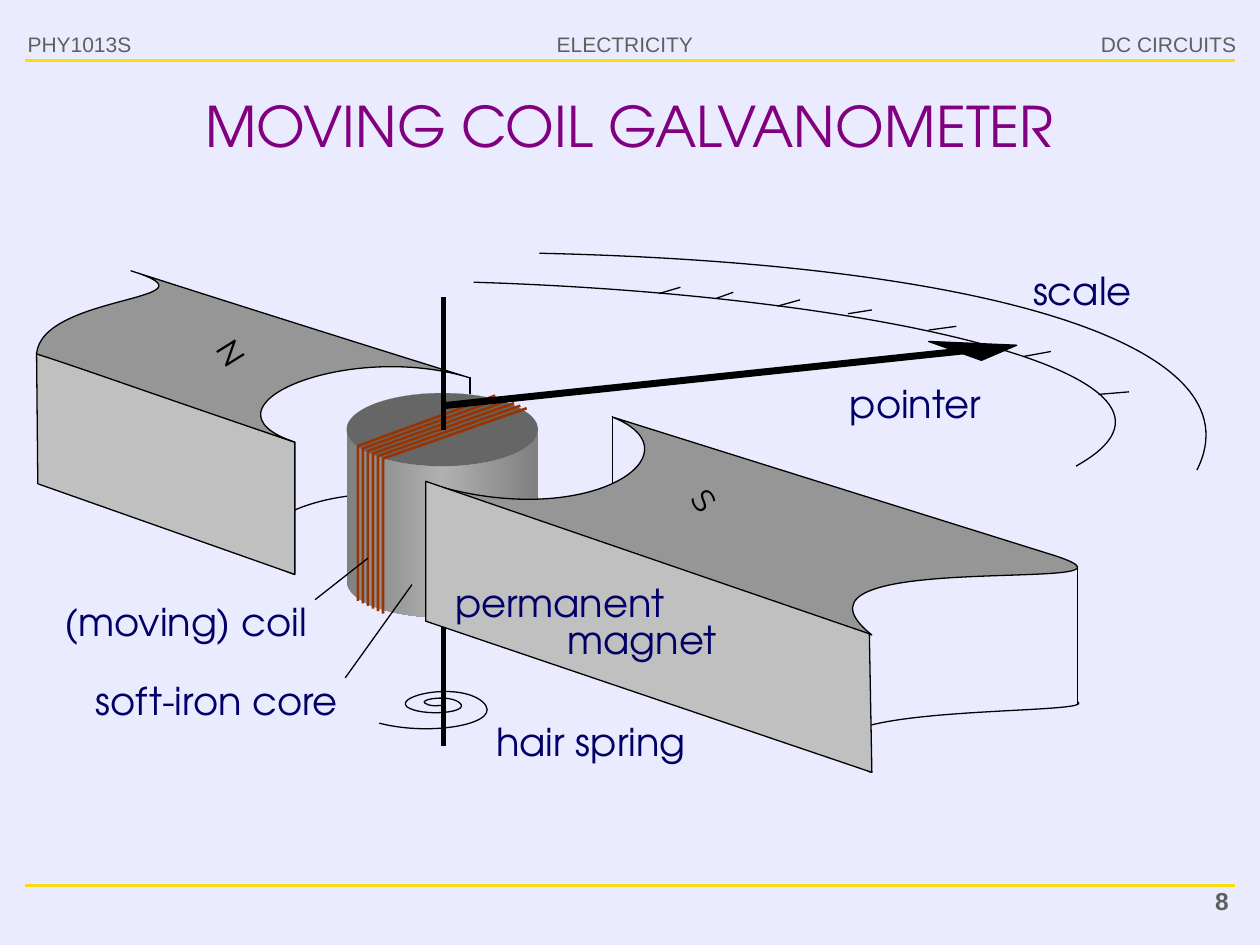
from copy import deepcopy

from pptx import Presentation
from pptx.dml.color import RGBColor
from pptx.enum.shapes import MSO_CONNECTOR, MSO_SHAPE
from pptx.enum.text import MSO_ANCHOR, PP_ALIGN
from pptx.oxml import parse_xml
from pptx.oxml.ns import nsdecls, qn
from pptx.oxml.xmlchemy import OxmlElement
from pptx.util import Cm, Pt

LAVENDER = RGBColor(0xEB, 0xEB, 0xFF)
YELLOW = RGBColor(0xF8, 0xDC, 0x0E)
HEADER_GREY = RGBColor(0x5F, 0x5F, 0x5F)
PURPLE = RGBColor(0x80, 0x00, 0x80)
NAVY = RGBColor(0x00, 0x00, 0x66)
BLACK = RGBColor(0x00, 0x00, 0x00)
COPPER = RGBColor(0x99, 0x33, 0x00)
POLE_TOP = RGBColor(0x96, 0x96, 0x96)
POLE_SIDE = RGBColor(0xC0, 0xC0, 0xC0)
CORE_TOP = RGBColor(0x66, 0x66, 0x66)
CORE_EDGE = RGBColor(0x80, 0x80, 0x80)
CORE_MIDDLE = RGBColor(0xB0, 0xB0, 0xB0)
LABEL_FONT = "TeX Gyre Adventor"

# Content: all places are in inches, as left, top, width, height
TITLE = "MOVING COIL GALVANOMETER"
HEADERS = [  # text, place, alignment, size, bold
    ("ELECTRICITY", (4.06, 0.2, 1.8, 0.3), PP_ALIGN.CENTER, 12, False),
    ("DC CIRCUITS", (8.1, 0.2, 1.81, 0.3), PP_ALIGN.RIGHT, 12, False),
    ("PHY1013S", (0.12, 0.2, 1.18, 0.32), PP_ALIGN.LEFT, 12, False),
    ("8", (8.82, 6.98, 1.03, 0.37), PP_ALIGN.RIGHT, 14, True),
]
LABELS = [  # text, left, top, width
    ("scale", 7.84, 2.08, 1.5),
    ("pointer", 6.52, 2.98, 1.49),
    ("permanent", 3.53, 4.56, 1.83),
    ("magnet", 4.18, 4.85, 1.83),
    ("hair spring", 3.65, 5.66, 2.08),
    ("soft-iron core", 0.6, 5.34, 2.24),
    ("(moving) coil", 0.4, 4.71, 2.15),
]
LEADERS = [(2.74, 5.38, 3.27, 4.64), (2.5, 4.76, 2.92, 4.43)]
SCALE_TICKS = [
    (5.23, 2.33, 5.4, 2.28), (5.68, 2.37, 5.82, 2.32), (6.17, 2.43, 6.35, 2.38),
    (6.73, 2.49, 6.92, 2.46), (7.37, 2.62, 7.59, 2.59), (8.12, 2.83, 8.34, 2.79),
    (8.72, 3.13, 8.96, 3.11),
]

# Outlines: start point, then segments (two numbers a line, six a curve)
NORTH_BASE = [(2.34, 4.56), (1.51, 4.28, 2.68, 3.66, 3.73, 4.04)]
NORTH_SIDE = [(0.29, 2.8), (0.3, 3.84), (2.34, 4.56), (2.34, 3.51), (0.29, 2.8)]
NORTH_TOP = [(3.73, 3), (2.38, 2.58, 1.04, 2.15, 1.04, 2.15),
             (1.81, 2.39, 0.33, 2.33, 0.29, 2.81), (0.58, 2.9, 1.16, 3.11, 2.34, 3.51),
             (1.51, 3.23, 2.76, 2.7, 3.73, 3)]
SOUTH_BASE = [(8.55, 5.57), (8.77, 5.69, 5.82, 5.56, 6.91, 6.13)]
SOUTH_TOP = [(4.86, 3.31), (6.61, 3.86, 8.37, 4.41, 8.37, 4.41),
             (9.35, 4.73, 6.03, 4.33, 6.92, 5.04), (6.92, 5.04, 5.15, 4.44, 3.38, 3.83),
             (4.66, 4.24, 5.59, 3.6, 4.86, 3.31)]
SOUTH_SIDE = [(3.38, 4.93), (3.38, 3.82), (6.9, 5.03), (6.92, 6.13), (3.38, 4.93)]
HAIR_SPRING = [(3.01, 5.74), (3.43, 5.85, 4.02, 5.74, 3.83, 5.57),
               (3.64, 5.41, 3.13, 5.52, 3.23, 5.61), (3.34, 5.69, 3.74, 5.66, 3.65, 5.58),
               (3.57, 5.51, 3.33, 5.55, 3.37, 5.58), (3.41, 5.61, 3.47, 5.6, 3.5, 5.6)]
POINTER_HEAD = [(7.37, 2.71), (8.07, 2.74), (7.79, 2.86), (7.37, 2.71)]
SCALE_ARCS = [[(3.76, 2.24), (6.97, 2.34, 9.82, 2.99, 8.54, 3.7)],
              [(4.28, 2.01), (7.85, 2.09, 10, 2.74, 9.5, 3.73)]]
# Windings run foot - rim - far rim; each one is shifted by a fixed step
FIRST_WINDING = [(2.84, 4.77), (2.84, 3.54), (3.93, 3.14)]
WINDING_STEPS = [(0.04, 0.02), (0.04, 0.02), (0.05, 0.02)]
WINDING_COUNT = 6


def inches(*lengths):
    return [Cm(length * 2.54) for length in lengths]


def add_line(parent, ends, width=0.75, color=BLACK):
    line = parent.add_connector(MSO_CONNECTOR.STRAIGHT, *inches(*ends))
    line.line.color.rgb = color
    line.line.width = Pt(width)
    line._element.spPr.append(OxmlElement("a:effectLst"))


def add_outline(parent, points, fill=None, width=0.75, color=BLACK):
    start, *segments = points
    builder = parent.build_freeform(*inches(*start), scale=1.0)
    vertices = [inches(*segment[i:i + 2])
                for segment in segments for i in range(0, len(segment), 2)]
    builder.add_line_segments(vertices, close=fill is not None)
    outline = builder.convert_to_shape()
    outline.shadow.inherit = False
    outline.line.color.rgb = color
    outline.line.width = Pt(width)
    if fill is None:
        outline.fill.background()
    else:
        outline.fill.solid()
        outline.fill.fore_color.rgb = fill
    # Join the three points of each curve into one Bézier segment
    drawing = outline._element.find(".//" + qn("a:path"))
    nodes = iter(drawing.findall(qn("a:lnTo")))
    for segment in segments:
        group = [next(nodes) for _ in range(len(segment) // 2)]
        if len(group) == 3:
            curve = OxmlElement("a:cubicBezTo")
            group[0].addprevious(curve)
            for node in group:
                curve.append(node[0])
                drawing.remove(node)


def add_text(parent, text, place, align, size, color, font="Arial", bold=False):
    box = parent.add_textbox(*inches(*place))
    box.text_frame.word_wrap = True
    paragraph = box.text_frame.paragraphs[0]
    paragraph.text = text
    paragraph.alignment = align
    run_font = paragraph.runs[0].font
    run_font.name, run_font.size, run_font.bold = font, Pt(size), bold
    run_font.color.rgb = color
    return box


def add_pole_letter(parent, letter, place, angle):
    box = add_text(parent, letter, place, PP_ALIGN.CENTER, 18, BLACK, "Montserrat")
    box.rotation = angle
    box.text_frame.word_wrap = False
    box.text_frame.paragraphs[0].runs[0].font._element.insert(0, parse_xml(
        f'<a:ln {nsdecls("a")} w="9525"><a:solidFill><a:srgbClr val="000000"/>'
        "</a:solidFill></a:ln>"))


def add_core(parent):
    body = parent.add_shape(MSO_SHAPE.CAN, *inches(2.75, 3.12, 1.52, 1.78))
    body.adjustments[0] = 0.38
    body.fill.gradient()
    body.fill.gradient_angle = 0
    stops = body.fill.gradient_stops
    for stop, position in zip(stops, (0, 1)):
        stop.color.rgb = CORE_EDGE
        stop.position = position
    first = body._element.find(".//" + qn("a:gs"))
    first.addnext(deepcopy(first))
    middle = body.fill.gradient_stops[1]
    middle.color.rgb = CORE_MIDDLE
    middle.position = 0.5
    top = parent.add_shape(MSO_SHAPE.OVAL, *inches(2.75, 3.12, 1.52, 0.58))
    top.fill.solid()
    top.fill.fore_color.rgb = CORE_TOP
    for part in (body, top):
        part.line.fill.background()
        part.shadow.inherit = False


prs = Presentation()
prs.slide_width, prs.slide_height = inches(10, 7.5)
slide = prs.slides.add_slide(prs.slide_layouts[5])
slide.background.fill.solid()
slide.background.fill.fore_color.rgb = LAVENDER
shapes = slide.shapes

# Header, footer and title
for rule_y in (0.48, 7.03):
    add_line(shapes, (0.2, rule_y, 9.8, rule_y), 1.75, YELLOW)
for text, place, align, size, bold in HEADERS:
    add_text(shapes, text, place, align, size, HEADER_GREY, bold=bold)
title = shapes.title
title.left, title.top, title.width, title.height = inches(0.5, 0.63, 9, 0.72)
title.text_frame.text = TITLE
title.text_frame.vertical_anchor = MSO_ANCHOR.MIDDLE
heading = title.text_frame.paragraphs[0]
heading.alignment = PP_ALIGN.CENTER
heading.runs[0].font.name = LABEL_FONT
heading.runs[0].font.size = Pt(32)
heading.runs[0].font.color.rgb = PURPLE

# North pole
add_outline(shapes, NORTH_BASE)
add_outline(shapes, NORTH_SIDE, POLE_SIDE)
add_line(shapes, (3.73, 4.05, 3.73, 2.99))
add_outline(shapes, NORTH_TOP, POLE_TOP)
add_pole_letter(shapes, "N", (1.68, 2.51, 0.19, 0.43), 58)

# Core, coil, shaft and hair spring
add_core(shapes)
for turn in range(WINDING_COUNT):
    winding = [(x + turn * dx, y + turn * dy)
               for (x, y), (dx, dy) in zip(FIRST_WINDING, WINDING_STEPS)]
    add_outline(shapes, winding, width=1.5, color=COPPER)
for shaft in ((3.52, 3.41, 3.52, 2.36), (3.52, 5.92, 3.52, 4.9)):
    add_line(shapes, shaft, 3)
add_outline(shapes, HAIR_SPRING)

# Pointer and scale
pointer = shapes.add_group_shape().shapes
add_line(pointer, (3.52, 3.22, 7.79, 2.77), 4)
add_outline(pointer, POINTER_HEAD, BLACK)
for arc in SCALE_ARCS:
    add_outline(shapes, arc)
for tick in SCALE_TICKS:
    add_line(shapes, tick)

# South pole
south = shapes.add_group_shape().shapes
add_outline(south, SOUTH_BASE)
add_outline(south, SOUTH_TOP, POLE_TOP)
add_line(south, (8.55, 5.59, 8.55, 4.49))
add_outline(south, SOUTH_SIDE, POLE_SIDE)
add_line(south, (4.86, 3.3, 4.86, 3.84))
add_pole_letter(south, "S", (5.39, 3.69, 0.23, 0.53), 54.1)

# Labels and their leader lines
for text, left, top, width in LABELS:
    frame = add_text(shapes, text, (left, top, width, 0.4), PP_ALIGN.CENTER,
                     22, NAVY, LABEL_FONT).text_frame
    frame.margin_left = frame.margin_right = frame.margin_top = frame.margin_bottom = 0
    frame.paragraphs[0].line_spacing = 1.1
for leader in LEADERS:
    add_line(shapes, leader)

prs.save("out.pptx")
